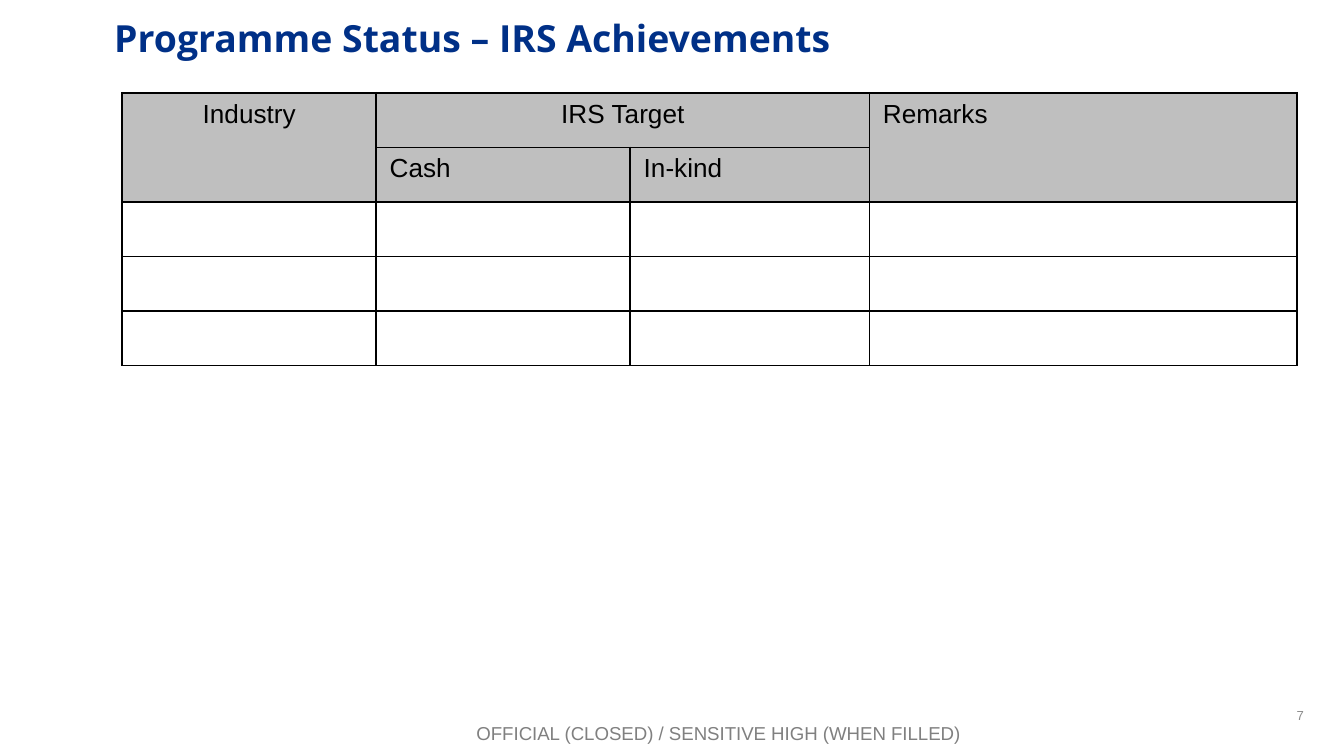
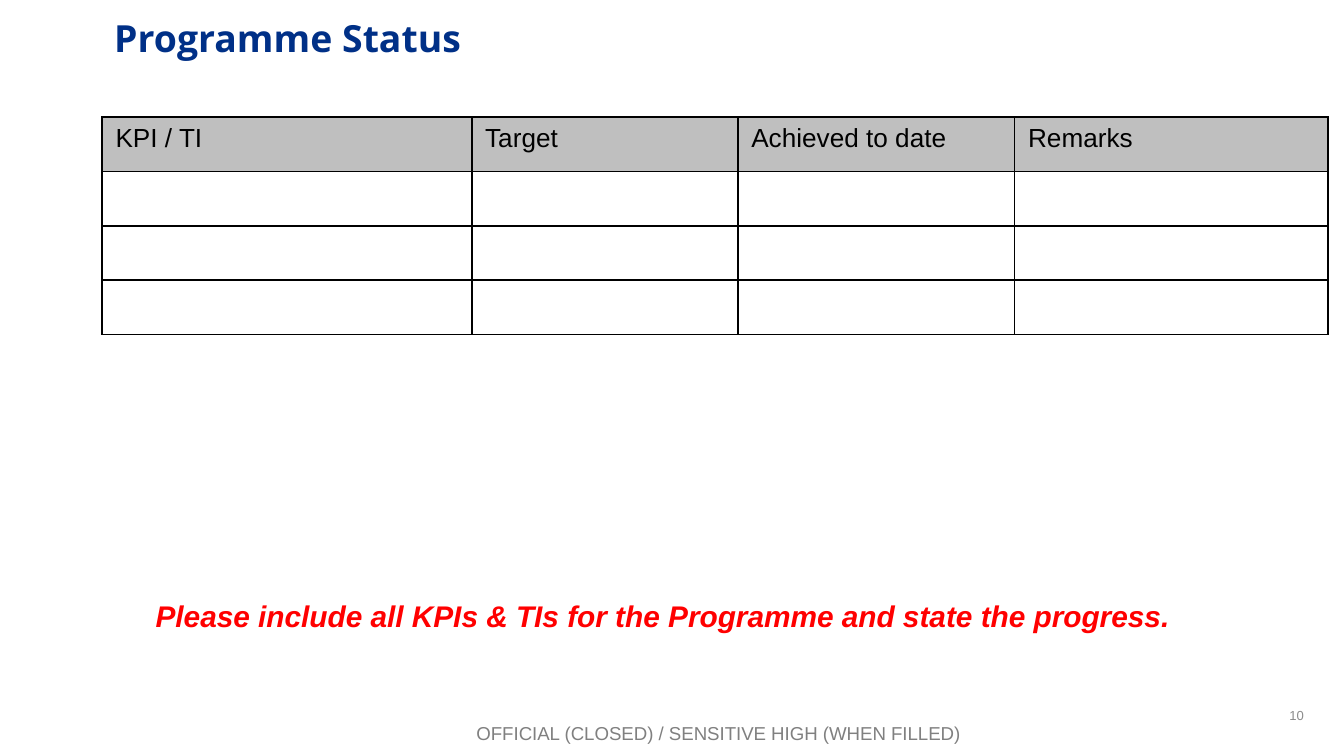
from lxml.etree import SubElement
from pptx import Presentation
from pptx.dml.color import RGBColor
from pptx.enum.text import MSO_ANCHOR, MSO_AUTO_SIZE, PP_ALIGN
from pptx.oxml import parse_xml
from pptx.oxml.ns import nsdecls, qn
from pptx.util import Inches, Pt

NAVY = "003087"
BLACK = "000000"
HEADER_GRAY = "BFBFBF"
FOOTER_GRAY = "808080"
NUMBER_GRAY = "8C8C8C"
RED = "FF0000"
BODY_FONT = "Arial"
TITLE_FONT = "Open Sans"
CLASSIFICATION = "OFFICIAL (CLOSED) / SENSITIVE HIGH (WHEN FILLED)"


def color(value):
    """Turn a hex string into a colour."""
    return RGBColor.from_string(value)


def write(frame, text, size, ink, font=BODY_FONT, align=PP_ALIGN.LEFT, bold=False, italic=False):
    """Write one formatted run into the first paragraph of a frame."""
    paragraph = frame.paragraphs[0]
    paragraph.alignment = align
    run = paragraph.add_run()
    run.text = text
    run.font.name = font
    run.font.size = Pt(size)
    run.font.bold = bold
    run.font.italic = italic
    run.font.color.rgb = color(ink)


def add_text(slide, box, text, size, ink, anchor=MSO_ANCHOR.TOP, **style):
    """Add a wrapping text box with one line of text."""
    frame = slide.shapes.add_textbox(*map(Inches, box)).text_frame
    frame.word_wrap = True
    frame.vertical_anchor = anchor
    write(frame, text, size, ink, **style)


def add_status_slide(presentation, title, number):
    """Add a slide with its title, page number and classification footer."""
    slide = presentation.slides.add_slide(presentation.slide_layouts[5])
    heading = slide.shapes.title
    heading.left, heading.top, heading.width, heading.height = map(Inches, (0.75, 0.06, 8.66, 0.79))
    frame = heading.text_frame
    frame.word_wrap = True
    frame.auto_size = MSO_AUTO_SIZE.NONE
    frame.vertical_anchor = MSO_ANCHOR.TOP
    write(frame, title, 20, NAVY, font=TITLE_FONT, bold=True)
    add_text(slide, (7.47, 5.17, 2.33, 0.3), str(number), 7, NUMBER_GRAY,
             anchor=MSO_ANCHOR.MIDDLE, align=PP_ALIGN.RIGHT)
    add_text(slide, (0.68, 5.32, 9.33, 0.27), CLASSIFICATION, 10, FOOTER_GRAY,
             align=PP_ALIGN.CENTER)
    return slide


def add_borders(cell):
    """Draw a thin black line on all four sides of a cell."""
    properties = cell._tc.get_or_add_tcPr()
    for position, side in enumerate(("lnL", "lnR", "lnT", "lnB")):
        line = parse_xml(f'<a:{side} {nsdecls("a")} w="{Pt(1)}"/>')
        fill = SubElement(line, qn("a:solidFill"))
        SubElement(fill, qn("a:srgbClr"), val=BLACK)
        properties.insert(position, line)


def add_status_table(slide, left, top, height, widths, row_count, header_rows):
    """Add a bordered table with gray header rows and empty rows to fill in."""
    table = slide.shapes.add_table(row_count, len(widths), Inches(left), Inches(top),
                                   Inches(sum(widths)), Inches(height)).table
    for column, width in zip(table.columns, widths):
        column.width = Inches(width)
    for row_index, row in enumerate(table.rows):
        for cell in row.cells:
            if row_index < header_rows:
                cell.fill.solid()
                cell.fill.fore_color.rgb = color(HEADER_GRAY)
            else:
                cell.fill.background()
            add_borders(cell)
    return table


def write_header(cell, text, align=PP_ALIGN.LEFT):
    """Write a column heading."""
    write(cell.text_frame, text, 14, BLACK, align=align)


def add_achievements_slide(presentation):
    """Build the industry target slide."""
    slide = add_status_slide(presentation, "Programme Status – IRS Achievements", 7)
    table = add_status_table(slide, 0.91, 0.69, 2.03, (1.89, 1.89, 1.78, 3.18), 5, 2)
    for start, end in (((0, 0), (1, 0)), ((0, 1), (0, 2)), ((0, 3), (1, 3))):
        table.cell(*start).merge(table.cell(*end))
    write_header(table.cell(0, 0), "Industry", PP_ALIGN.CENTER)
    write_header(table.cell(0, 1), "IRS Target", PP_ALIGN.CENTER)
    write_header(table.cell(0, 3), "Remarks")
    write_header(table.cell(1, 1), "Cash")
    write_header(table.cell(1, 2), "In-kind")


def add_indicators_slide(presentation):
    """Build the indicator progress slide."""
    slide = add_status_slide(presentation, "Programme Status", 10)
    table = add_status_table(slide, 0.76, 0.87, 1.62, (2.75, 1.98, 2.06, 2.33), 4, 1)
    headings = ("KPI / TI", "Target", "Achieved to date", "Remarks")
    for cell, text in zip(table.rows[0].cells, headings):
        write_header(cell, text)
    add_text(slide, (1.06, 4.4, 7.96, 0.37),
             "Please include all KPIs & TIs for the Programme and state the progress.",
             16, RED, bold=True, italic=True)


def main():
    """Build and save the presentation."""
    presentation = Presentation()
    presentation.slide_width = Inches(10)
    presentation.slide_height = presentation.slide_width * 9 // 16
    add_achievements_slide(presentation)
    add_indicators_slide(presentation)
    presentation.save("out.pptx")


if __name__ == "__main__":
    main()
